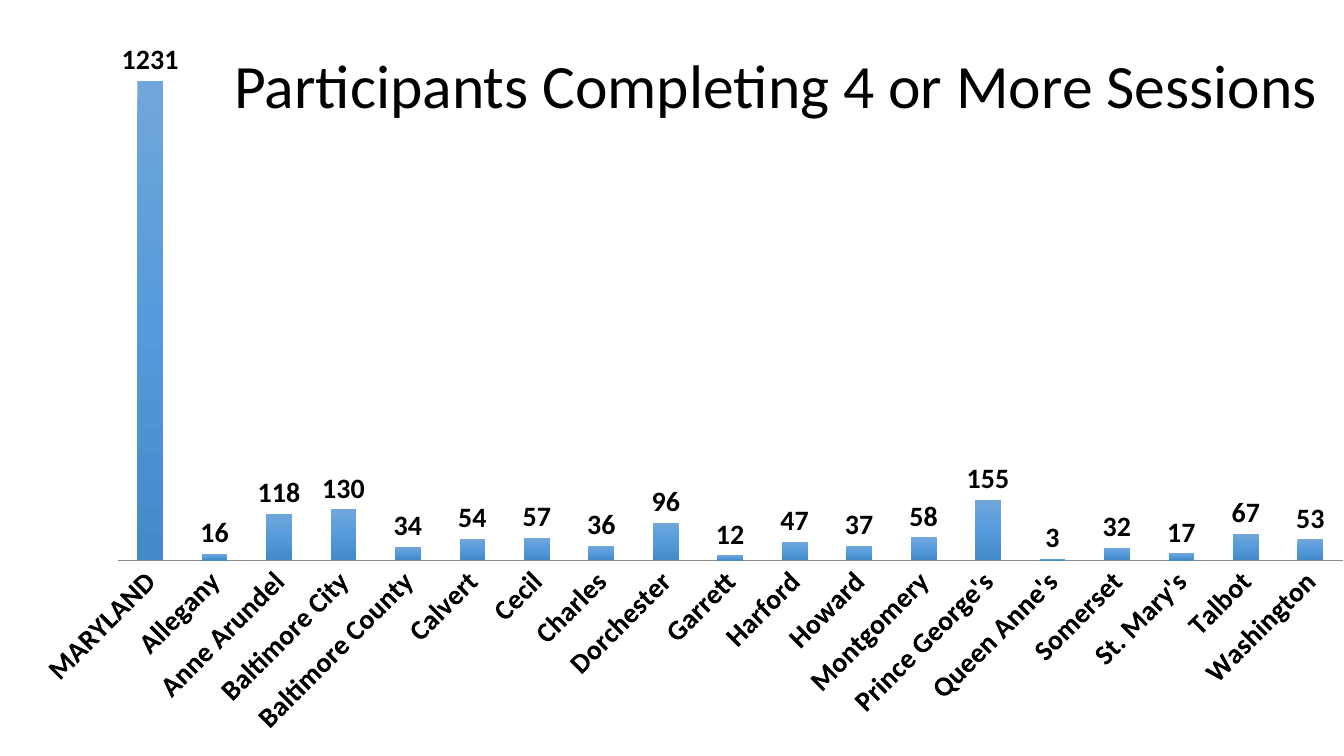
from copy import deepcopy
from typing import NamedTuple

from lxml.etree import Element, SubElement
from pptx import Presentation
from pptx.chart.chart import Chart
from pptx.chart.data import CategoryChartData
from pptx.dml.color import RGBColor
from pptx.enum.chart import XL_CHART_TYPE, XL_LABEL_POSITION, XL_TICK_LABEL_POSITION, XL_TICK_MARK
from pptx.enum.text import MSO_AUTO_SIZE
from pptx.oxml.ns import qn
from pptx.slide import Slide
from pptx.text.text import Font
from pptx.util import Cm, Pt


class County(NamedTuple):
    name: str
    count: int


class Stop(NamedTuple):
    place: float
    shade: str


COUNTIES = [
    County("MARYLAND", 1231),
    County("Allegany", 16),
    County("Anne Arundel", 118),
    County("Baltimore City", 130),
    County("Baltimore County", 34),
    County("Calvert", 54),
    County("Cecil", 57),
    County("Charles", 36),
    County("Dorchester", 96),
    County("Garrett", 12),
    County("Harford", 47),
    County("Howard", 37),
    County("Montgomery", 58),
    County("Prince George's", 155),
    County("Queen Anne's", 3),
    County("Somerset", 32),
    County("St. Mary's", 17),
    County("Talbot", 67),
    County("Washington", 53),
]
STOPS = [Stop(0, "71A6DB"), Stop(0.5, "559BDB"), Stop(1, "438AC9")]
PERCENTS = {"x": 5.6, "y": 2, "w": 94.3, "h": 72.1}


def color(code: str) -> RGBColor:
    return RGBColor.from_string(code)


def style(font: Font, size: int, bold: bool = False) -> None:
    font.name = "Calibri"
    font.size = Pt(size)
    font.bold = bold
    font.color.rgb = color("000000")


def place_plot(chart: Chart) -> None:
    area = chart._chartSpace.find(".//" + qn("c:plotArea"))
    for old in area.findall(qn("c:layout")):
        area.remove(old)
    layout = Element(qn("c:layout"))
    area.insert(0, layout)
    manual = SubElement(layout, qn("c:manualLayout"))
    rules = {"layoutTarget": "inner", "xMode": "edge", "yMode": "edge"}
    rules |= {side: f"{share / 100:.3f}" for side, share in PERCENTS.items()}
    for tag, value in rules.items():
        SubElement(manual, qn("c:" + tag)).set("val", value)


def shade_bars(chart: Chart) -> None:
    fill = chart.plots[0].series[0].format.fill
    fill.gradient()
    fill.gradient_angle = 270
    first = chart._chartSpace.find(".//" + qn("a:gs"))
    first.addnext(deepcopy(first))
    for mark, stop in zip(fill.gradient_stops, STOPS):
        mark.position = stop.place
        mark.color.rgb = color(stop.shade)


def draw_chart(slide: Slide) -> None:
    data = CategoryChartData()
    data.categories = [county.name for county in COUNTIES]
    data.add_series("Series 1", [county.count for county in COUNTIES])
    chart = slide.shapes.add_chart(
        XL_CHART_TYPE.COLUMN_CLUSTERED, Cm(1.02), Cm(0), Cm(32.85), Cm(19.05), data
    ).chart
    chart.has_title = False
    chart.has_legend = False
    style(chart.font, 10)

    plot = chart.plots[0]
    plot.gap_width = 150
    plot.overlap = -25
    plot.vary_by_categories = False
    labels = plot.series[0].data_labels
    labels.show_value = True
    labels.position = XL_LABEL_POSITION.OUTSIDE_END
    style(labels.font, 20, True)

    base = chart.category_axis
    base.major_tick_mark = XL_TICK_MARK.NONE
    base.minor_tick_mark = XL_TICK_MARK.NONE
    base.tick_label_position = XL_TICK_LABEL_POSITION.NEXT_TO_AXIS
    base.format.line.color.rgb = color("898989")
    base.format.line.width = Pt(0.75)
    style(base.tick_labels.font, 20, True)
    base._element.find(qn("c:txPr")).find(qn("a:bodyPr")).set("rot", "-2700000")

    scale = chart.value_axis
    scale.minimum_scale = 0
    scale.maximum_scale = 1400
    scale.major_tick_mark = XL_TICK_MARK.NONE
    scale.has_major_gridlines = False
    scale.visible = False

    place_plot(chart)
    shade_bars(chart)


def draw_title(slide: Slide) -> None:
    box = slide.shapes.add_textbox(Cm(5.66), Cm(1.05), Cm(28.19), Cm(2.13))
    frame = box.text_frame
    frame.word_wrap = True
    frame.auto_size = MSO_AUTO_SIZE.SHAPE_TO_FIT_TEXT
    run = frame.paragraphs[0].add_run()
    run.text = "Participants Completing 4 or More Sessions"
    style(run.font, 44)


def main() -> None:
    deck = Presentation()
    deck.slide_width = Cm(33.87)
    deck.slide_height = Cm(19.05)
    slide = deck.slides.add_slide(deck.slide_layouts[6])
    draw_chart(slide)
    draw_title(slide)
    deck.save("out.pptx")


if __name__ == "__main__":
    main()
